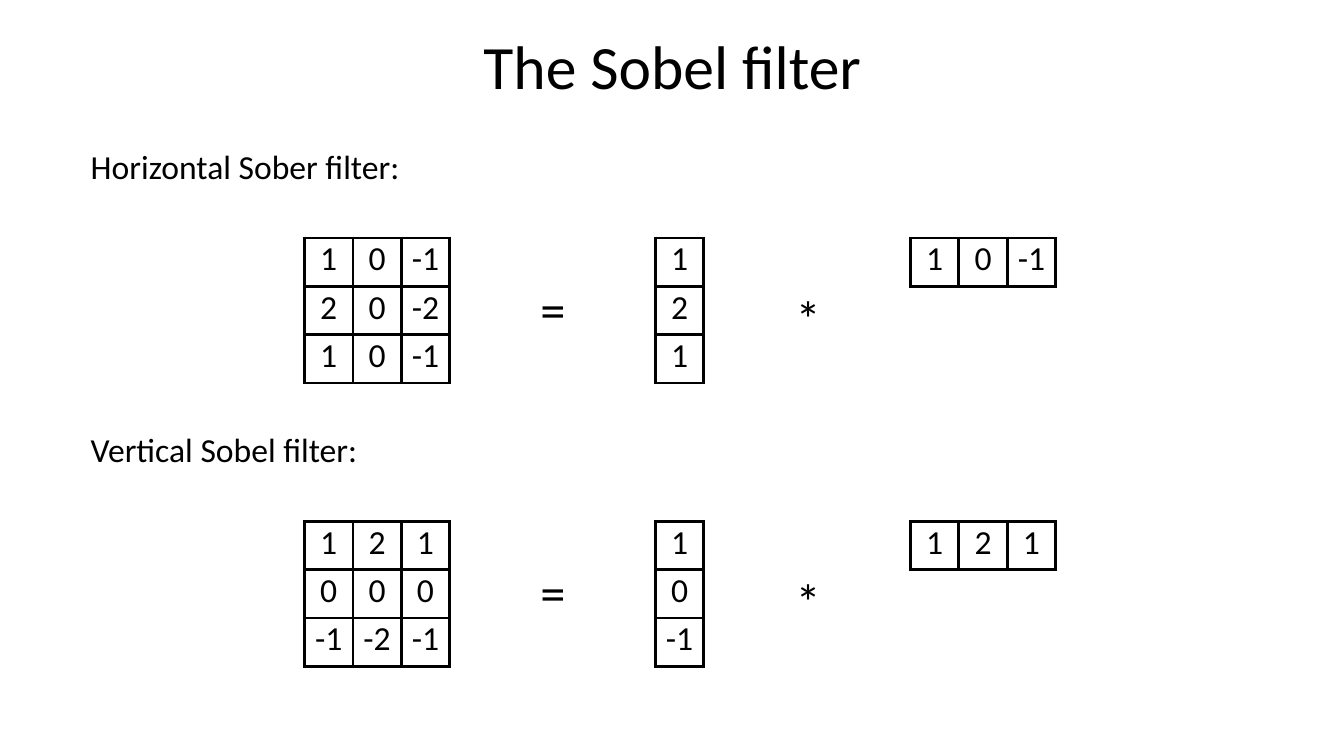
from dataclasses import dataclass

from lxml.etree import SubElement
from pptx import Presentation
from pptx.dml.color import RGBColor
from pptx.enum.text import MSO_ANCHOR, MSO_AUTO_SIZE, PP_ALIGN
from pptx.oxml.ns import qn
from pptx.util import Inches, Pt

FONT = "Calibri"
BLACK = "000000"
CELL = 0.48
BORDER_WIDTH = 2.25
FILTER_PITCH = 2.81
MARGINS = {
    "margin_left": 0,
    "margin_top": Inches(0.01),
    "margin_right": 0,
    "margin_bottom": 0,
}
FRAME_FORMAT = {
    **MARGINS,
    "word_wrap": True,
    "auto_size": MSO_AUTO_SIZE.NONE,
    "vertical_anchor": MSO_ANCHOR.TOP,
}

Matrix = list[list[int]]


@dataclass(frozen=True)
class Filter:
    label: str
    kernel: Matrix
    column: Matrix
    row: Matrix


FILTERS = [
    Filter(
        "Horizontal Sober filter:",
        [[1, 0, -1], [2, 0, -2], [1, 0, -1]],
        [[1], [2], [1]],
        [[1, 0, -1]],
    ),
    Filter(
        "Vertical Sobel filter:",
        [[1, 2, 1], [0, 0, 0], [-1, -2, -1]],
        [[1], [0], [-1]],
        [[1, 2, 1]],
    ),
]


def rgb(value: str) -> RGBColor:
    return RGBColor.from_string(value)


def apply(target, values: dict) -> None:
    """Set every named attribute of the target."""
    for name, value in values.items():
        setattr(target, name, value)


def write(frame, text: str, size: float, align=PP_ALIGN.LEFT) -> None:
    para = frame.paragraphs[0]
    apply(para, {"alignment": align, "space_before": Pt(0.8)})
    span = para.add_run()
    span.text = text
    apply(span.font, {"name": FONT, "size": Pt(size), "bold": False})
    span.font.color.rgb = rgb(BLACK)


def place(shape, left: float, top: float, width: float, height: float) -> None:
    apply(shape, {
        "left": Inches(left),
        "top": Inches(top),
        "width": Inches(width),
        "height": Inches(height),
    })


def add_title(page, text: str) -> None:
    title = page.shapes.title
    place(title, 0.56, 0.27, 12.22, 0.76)
    apply(title.text_frame, FRAME_FORMAT)
    write(title.text_frame, text, 44, PP_ALIGN.CENTER)


def add_text(page, text: str, left: float, top: float,
             width: float, height: float, size: float) -> None:
    box = page.shapes.add_textbox(0, 0, 0, 0)
    place(box, left, top, width, height)
    apply(box.text_frame, FRAME_FORMAT)
    write(box.text_frame, text, size)


def add_borders(cell) -> None:
    properties = cell._tc.get_or_add_tcPr()
    for side in ("lnL", "lnR", "lnT", "lnB"):
        line = SubElement(properties, qn(f"a:{side}"), w=str(Pt(BORDER_WIDTH)))
        fill = SubElement(line, qn("a:solidFill"))
        SubElement(fill, qn("a:srgbClr"), val=BLACK)


def add_matrix(page, values: Matrix, left: float, top: float) -> None:
    rows, columns = len(values), len(values[0])
    table = page.shapes.add_table(
        rows, columns, Inches(left), Inches(top),
        Inches(columns * CELL), Inches(rows * CELL),
    ).table
    apply(table, {"first_row": False, "horz_banding": False})
    for column in table.columns:
        column.width = Inches(CELL)
    for row, numbers in zip(table.rows, values):
        row.height = Inches(CELL)
        for cell, number in zip(row.cells, numbers):
            apply(cell, MARGINS)
            add_borders(cell)
            cell.fill.background()
            write(cell.text_frame, str(number), 24, PP_ALIGN.CENTER)


def add_filter(page, item: Filter, offset: float) -> None:
    """Draw a label and its kernel as a product of a column and a row."""
    add_text(page, item.label, 0.9, 1.44 + offset, 3.3, 0.43, 24)
    add_matrix(page, item.kernel, 3.02, 2.36 + offset)
    add_text(page, "=", 5.36, 2.75 + offset, 0.28, 0.63, 36)
    add_matrix(page, item.column, 6.5, 2.36 + offset)
    add_text(page, "*", 7.89, 2.84 + offset, 0.28, 0.63, 36)
    add_matrix(page, item.row, 9.03, 2.36 + offset)


def main() -> None:
    deck = Presentation()
    apply(deck, {"slide_width": Inches(13.33), "slide_height": Inches(7.5)})
    page = deck.slides.add_slide(deck.slide_layouts[5])
    add_title(page, "The Sobel filter")
    for index, item in enumerate(FILTERS):
        add_filter(page, item, index * FILTER_PITCH)
    deck.save("out.pptx")


if __name__ == "__main__":
    main()
